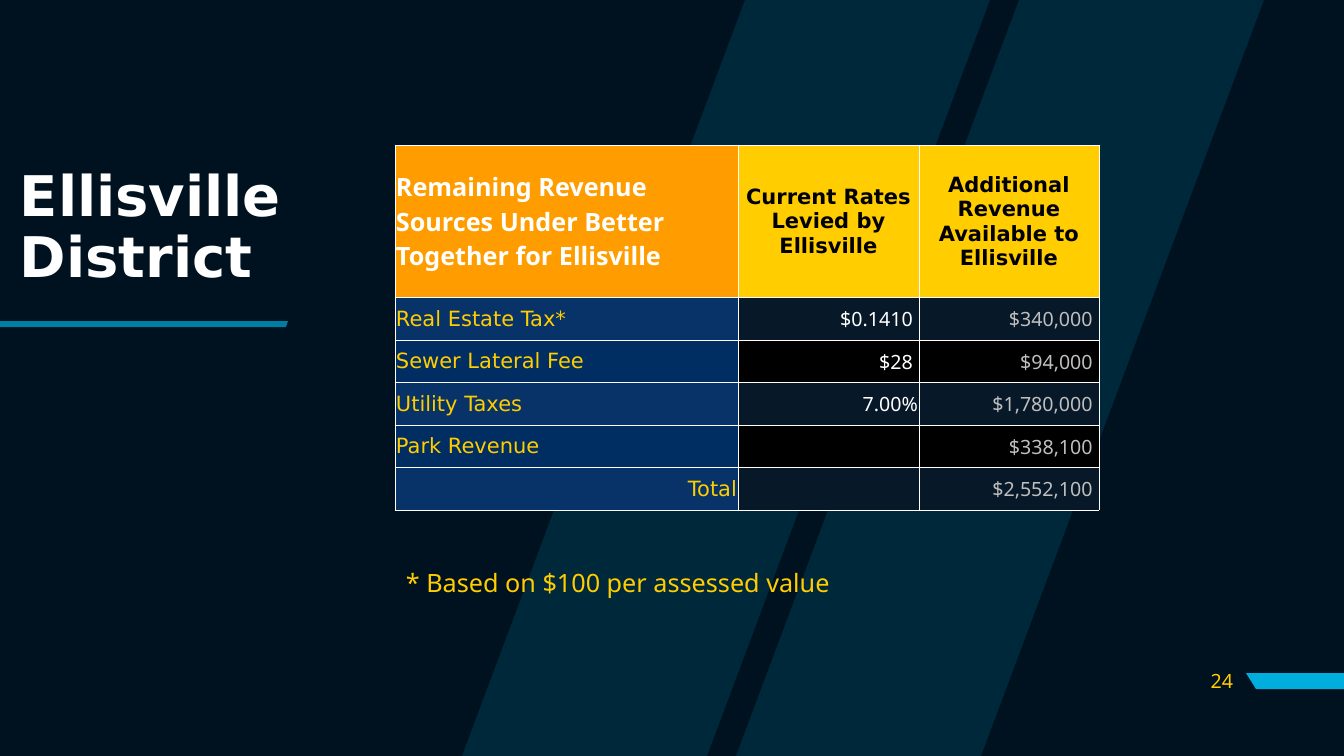
from lxml.etree import SubElement
from pptx import Presentation
from pptx.dml.color import RGBColor
from pptx.enum.text import MSO_ANCHOR, PP_ALIGN
from pptx.oxml.ns import qn
from pptx.util import Pt

PX = 914400 / 100.8
NAVY = RGBColor(0x00, 0x11, 0x1F)
CYAN = RGBColor(0x00, 0xAE, 0xDE)
WHITE = RGBColor(0xFF, 0xFF, 0xFF)
BLACK = RGBColor(0x00, 0x00, 0x00)
GRAY = RGBColor(0xBF, 0xBF, 0xBF)
YELLOW = RGBColor(0xFF, 0xCD, 0x00)
ORANGE = RGBColor(0xFF, 0x9D, 0x00)
LABEL_FILLS = RGBColor(0x07, 0x33, 0x68), RGBColor(0x00, 0x2E, 0x62)
VALUE_FILLS = RGBColor(0x07, 0x18, 0x28), BLACK
DEJAVU, NOTO = "DejaVu Sans", "Noto Sans"

COL_WIDTHS = [343, 181, 180]
ROW_HEIGHTS = [152, 43, 42, 43, 42, 43]
HEADERS = [
    "Remaining Revenue Sources Under Better Together for Ellisville",
    "Current Rates Levied by Ellisville",
    "Additional Revenue Available to Ellisville",
]
ROWS = [
    ("Real Estate Tax*", "$0.1410 ", "$340,000 "),
    ("Sewer Lateral Fee", "$28 ", "$94,000 "),
    ("Utility Taxes", "7.00%", "$1,780,000 "),
    ("Park Revenue", "", "$338,100 "),
    ("Total", "", "$2,552,100 "),
]


def px(n):
    return round(n * PX)


def add_run(p, text, size, font, color, bold=False):
    r = p.add_run()
    r.text = text
    r.font.size = Pt(size)
    r.font.name = font
    r.font.bold = bold
    r.font.color.rgb = color


def add_polygons(s, polygons, alpha=100):
    """Draw closed outlines as one cyan shape; alpha is in percent."""
    builder = s.shapes.build_freeform(*polygons[0][0], scale=PX)
    builder.add_line_segments(polygons[0][1:])
    for points in polygons[1:]:
        builder.move_to(*points[0])
        builder.add_line_segments(points[1:])
    sp = builder.convert_to_shape()
    sp.shadow.inherit = False
    sp.line.fill.background()
    sp.fill.solid()
    sp.fill.fore_color.rgb = CYAN
    if alpha < 100:
        color = sp.fill._xPr.find(qn("a:solidFill"))[0]
        SubElement(color, qn("a:alpha"), val=str(alpha * 1000))


def add_text(s, x, y, w, h, text, size, font, color, bold=False,
             align=PP_ALIGN.LEFT, anchor=MSO_ANCHOR.MIDDLE, spacing=1.0):
    tf = s.shapes.add_textbox(px(x), px(y), px(w), px(h)).text_frame
    tf.word_wrap = True
    tf.vertical_anchor = anchor
    p = tf.paragraphs[0]
    p.alignment = align
    p.line_spacing = spacing
    add_run(p, text, size, font, color, bold)


def add_backdrop(s, w, h):
    s.background.fill.solid()
    s.background.fill.fore_color.rgb = NAVY
    slant, band = 283, 245
    add_polygons(s, [
        [(x, h), (x + band, h), (x + band + slant, 0), (x + slant, 0)]
        for x in (736, 462)
    ], alpha=15)
    add_polygons(s, [[(w, 673), (w, 689), (w - 88, 689), (w - 98, 673)]])
    add_polygons(s, [[(0, 321), (0, 327), (286, 327), (288, 321)]], alpha=70)


def style_cell(cell, fill):
    cell.fill.solid()
    cell.fill.fore_color.rgb = fill
    cell.vertical_anchor = MSO_ANCHOR.MIDDLE
    cell.margin_left = cell.margin_top = cell.margin_right = px(1)
    cell.margin_bottom = 0
    tcPr = cell._tc.get_or_add_tcPr()
    for i, side in enumerate(("lnL", "lnR", "lnT", "lnB")):
        ln = tcPr.makeelement(qn("a:" + side), {"w": str(Pt(0.5))})
        solid = SubElement(ln, qn("a:solidFill"))
        SubElement(solid, qn("a:srgbClr"), val=str(WHITE))
        tcPr.insert(i, ln)


def fill_cell(cell, text, fill, align, *run_style):
    style_cell(cell, fill)
    p = cell.text_frame.paragraphs[0]
    p.alignment = align
    if text:
        add_run(p, text, *run_style)


def add_revenue_table(s, x, y):
    table = s.shapes.add_table(
        len(ROW_HEIGHTS), len(COL_WIDTHS), px(x), px(y),
        px(sum(COL_WIDTHS)), px(sum(ROW_HEIGHTS))).table
    table.horz_banding = False
    for col, width in zip(table.columns, COL_WIDTHS):
        col.width = px(width)
    for row, height in zip(table.rows, ROW_HEIGHTS):
        row.height = px(height)

    fill_cell(table.cell(0, 0), HEADERS[0], ORANGE, PP_ALIGN.LEFT,
              18, NOTO, WHITE, True)
    for c in (1, 2):
        fill_cell(table.cell(0, c), HEADERS[c], YELLOW, PP_ALIGN.CENTER,
                  15, DEJAVU, BLACK, True)
    for r, (label, rate, revenue) in enumerate(ROWS, 1):
        shade = (r - 1) % 2
        align = PP_ALIGN.RIGHT if label == "Total" else PP_ALIGN.LEFT
        fill_cell(table.cell(r, 0), label, LABEL_FILLS[shade], align,
                  15, DEJAVU, YELLOW)
        for c, text, color in ((1, rate, WHITE), (2, revenue, GRAY)):
            fill_cell(table.cell(r, c), text, VALUE_FILLS[shade],
                      PP_ALIGN.RIGHT, 14, NOTO, color)


def main():
    prs = Presentation()
    prs.slide_width, prs.slide_height = px(1344), px(756)
    s = prs.slides.add_slide(prs.slide_layouts[6])
    add_backdrop(s, 1344, 756)
    add_text(s, 10, 145, 311, 168, "Ellisville District", 40, DEJAVU, WHITE,
             bold=True, spacing=0.9)
    add_text(s, 1182, 661, 61, 40, "24", 14, NOTO, YELLOW,
             align=PP_ALIGN.RIGHT)
    add_revenue_table(s, 395, 145)
    add_text(s, 396, 562, 847, 131, "* Based on $100 per assessed value",
             18, NOTO, YELLOW, anchor=MSO_ANCHOR.TOP)
    prs.save("out.pptx")


if __name__ == "__main__":
    main()
